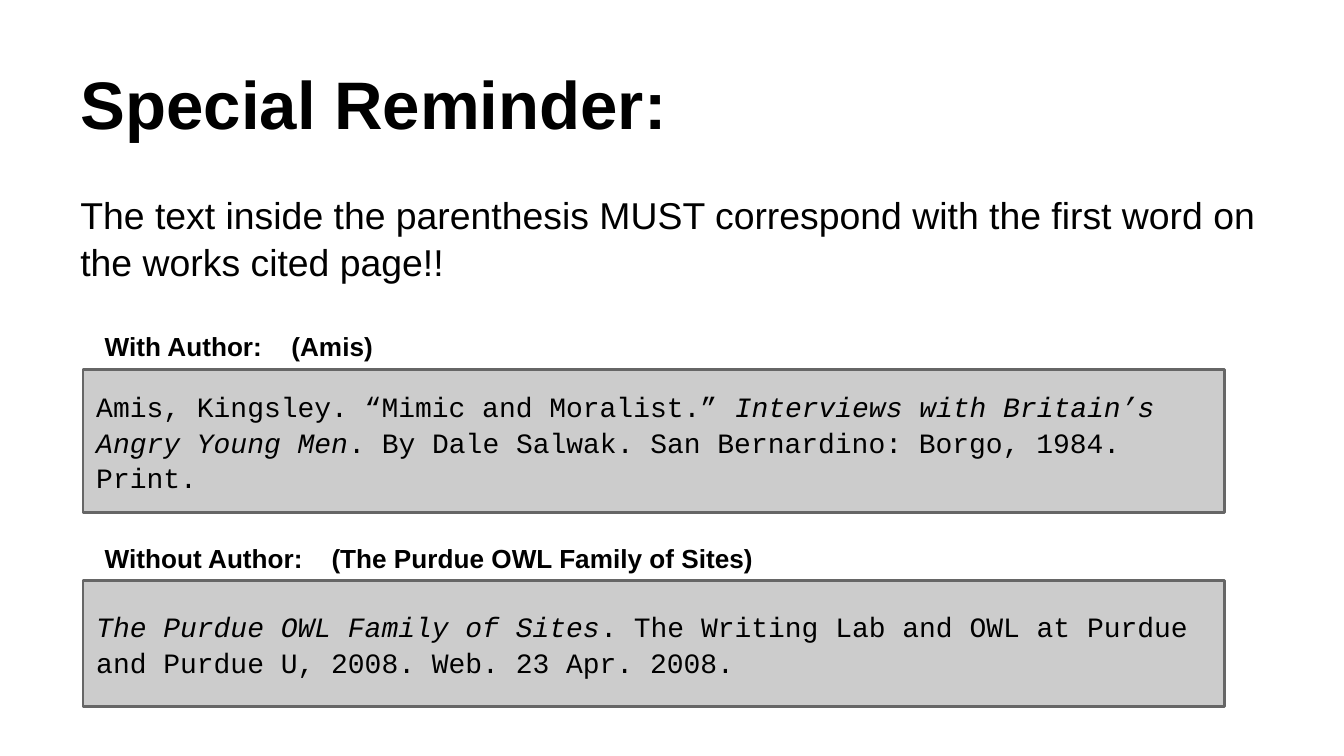
from lxml.etree import SubElement
from pptx import Presentation
from pptx.dml.color import RGBColor
from pptx.enum.shapes import MSO_SHAPE
from pptx.enum.text import MSO_ANCHOR, PP_ALIGN
from pptx.oxml.ns import qn
from pptx.util import Pt

TITLE = "Special Reminder:"
RULE = ("The text inside the parenthesis MUST correspond with the first word on "
        "the works cited page!!")
EXAMPLES = [
    {"label": "With Author:", "cite": "(Amis)", "tab": 100,
     "label_top": 170, "top": 198, "height": 76.5,
     "entry": [("Amis, Kingsley. “Mimic and Moralist.” ", False),
               ("Interviews with Britain’s Angry Young Men", True),
               (". By Dale Salwak. San Bernardino: Borgo, 1984. Print.", False)]},
    {"label": "Without Author:", "cite": "(The Purdue OWL Family of Sites)", "tab": 121.5,
     "label_top": 283.5, "top": 311, "height": 67.5,
     "entry": [("The Purdue OWL Family of Sites", True),
               (". The Writing Lab and OWL at Purdue and Purdue U, 2008. "
                "Web. 23 Apr. 2008.", False)]},
]
MARGIN, WIDTH = 36, 648
BOX_LEFT, BOX_WIDTH = 44.5, 611.5
LABEL_LEFT, LABEL_WIDTH, LABEL_HEIGHT = 49, 372, 20


def color(value):
    return RGBColor.from_string(value)


def place(shape, left, top, width, height):
    shape.left, shape.top = Pt(left), Pt(top)
    shape.width, shape.height = Pt(width), Pt(height)


def write(shape, runs, size, font="Arial", bold=False, anchor=MSO_ANCHOR.TOP,
          spacing=1.0, tab=None):
    tf = shape.text_frame
    tf.word_wrap = True
    tf.vertical_anchor = anchor
    tf.margin_left = tf.margin_right = tf.margin_top = tf.margin_bottom = Pt(7.2)
    p = tf.paragraphs[0]
    p.alignment = PP_ALIGN.LEFT
    p.line_spacing = spacing
    if tab:
        tabs = SubElement(p._p.get_or_add_pPr(), qn("a:tabLst"))
        SubElement(tabs, qn("a:tab"), pos=str(Pt(tab)), algn="l")
    p.font.name, p.font.size, p.font.bold = font, Pt(size), bold
    p.font.color.rgb = color("000000")
    for text, italic in runs:
        r = p.add_run()
        r.text = text
        if italic:
            r.font.italic = True


def add_text(s, left, top, width, height, text, size, **style):
    sp = s.shapes.add_textbox(Pt(left), Pt(top), Pt(width), Pt(height))
    write(sp, [(text, False)], size, **style)


def add_entry(s, top, height, runs):
    sp = s.shapes.add_shape(MSO_SHAPE.RECTANGLE, Pt(BOX_LEFT), Pt(top),
                            Pt(BOX_WIDTH), Pt(height))
    sp.shadow.inherit = False
    sp.fill.solid()
    sp.fill.fore_color.rgb = color("CCCCCC")
    sp.line.color.rgb = color("666666")
    sp.line.width = Pt(1.5)
    write(sp, runs, 15, font="Courier New", anchor=MSO_ANCHOR.MIDDLE, spacing=1.05)


prs = Presentation()
prs.slide_width, prs.slide_height = Pt(720), Pt(405)
s = prs.slides.add_slide(prs.slide_layouts[5])

place(s.shapes.title, MARGIN, 16.5, WIDTH, 67.5)
write(s.shapes.title, [(TITLE, False)], 36, bold=True, anchor=MSO_ANCHOR.BOTTOM)
add_text(s, MARGIN, 94.5, WIDTH, 67.5, RULE, 20, spacing=1.05)

for example in EXAMPLES:
    add_entry(s, example["top"], example["height"], example["entry"])
    add_text(s, LABEL_LEFT, example["label_top"], LABEL_WIDTH, LABEL_HEIGHT,
             example["label"] + "\t" + example["cite"], 14, bold=True, tab=example["tab"])

prs.save("out.pptx")
